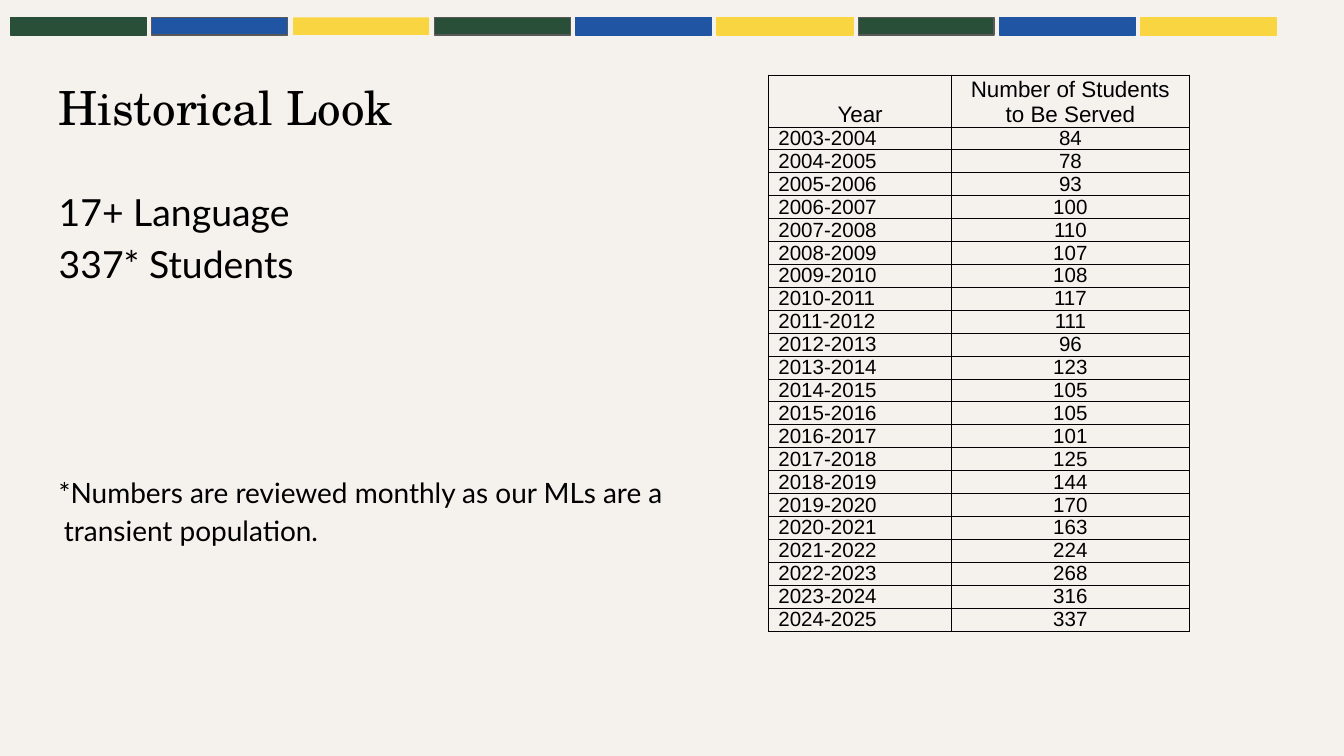
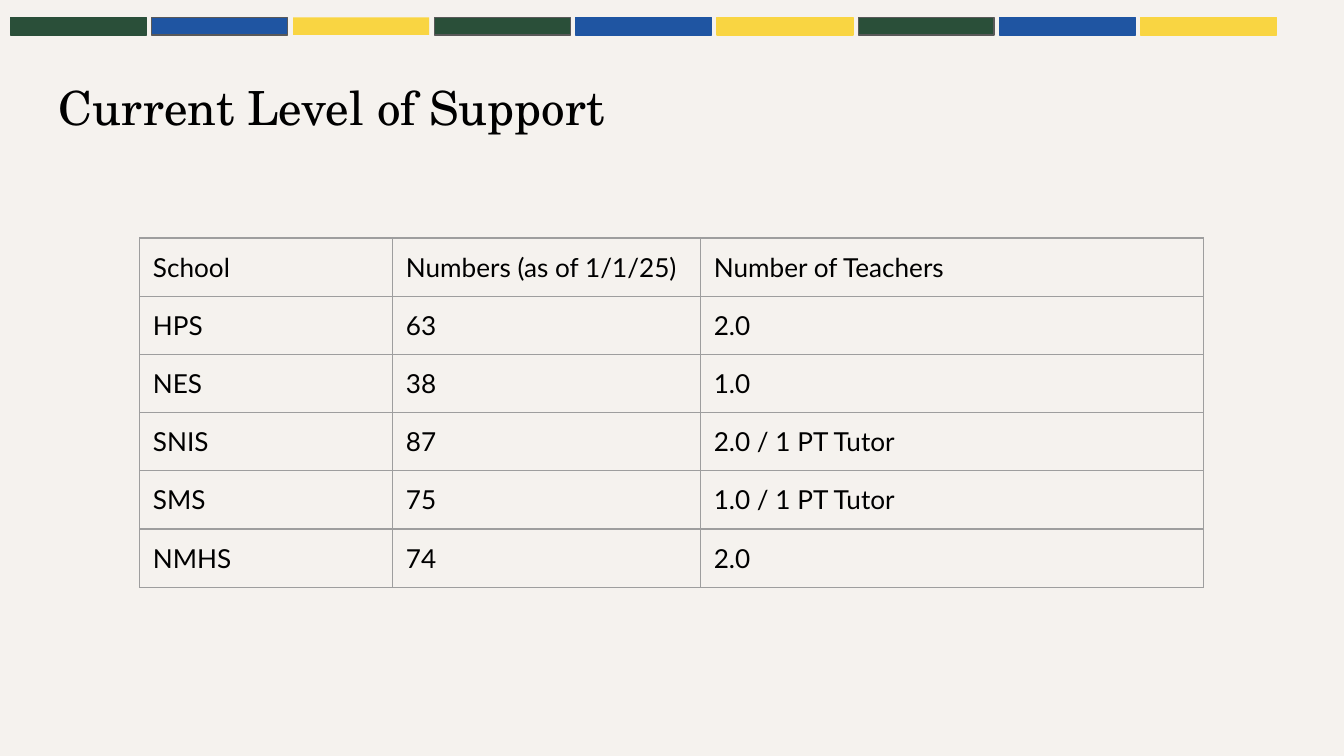
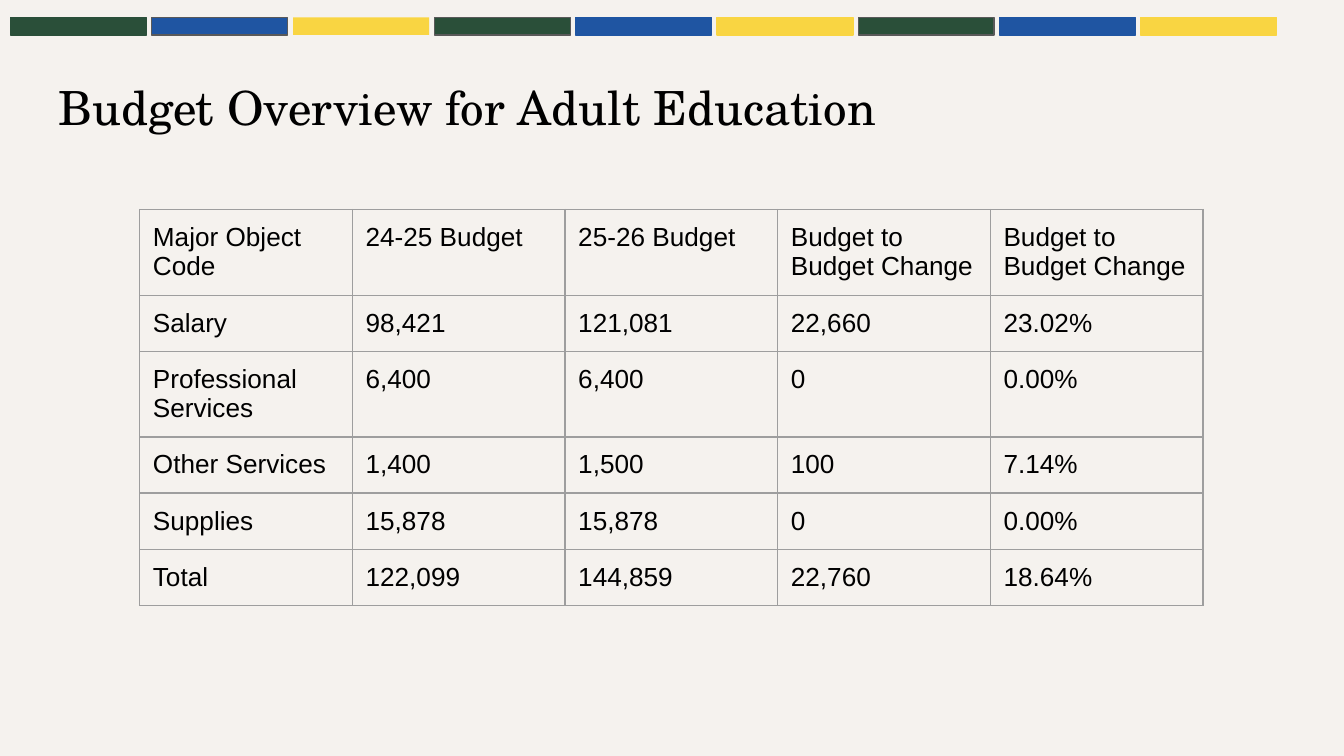
import lxml.etree
import pptx
import pptx.dml.color
import pptx.enum.shapes
import pptx.enum.text
import pptx.oxml
import pptx.oxml.ns
import pptx.util

Cm = pptx.util.Cm
Pt = pptx.util.Pt
ALIGN = pptx.enum.text.PP_ALIGN
ANCHOR = pptx.enum.text.MSO_ANCHOR

BLACK, PAPER, GREY = "000000", "F5F2EE", "595959"
GREEN, BLUE, YELLOW = "2A4F39", "1F55A2", "F9D542"
INSET = Cm(0.25)


def colour(code):
    return pptx.dml.color.RGBColor.from_string(code)


def write(para, text, font="Lato", size=14, align=ALIGN.LEFT, spacing=1.0, before=0, indent=0):
    para.alignment = align
    para.line_spacing = spacing
    para.space_before = Pt(before)
    if indent:
        properties = para._p.get_or_add_pPr()
        properties.set("marL", str(Cm(indent)))
        properties.set("indent", "0")
    span = para.add_run()
    span.text = text
    span.font.name = font
    span.font.size = Pt(size)
    span.font.color.rgb = colour(BLACK)


students = [84, 78, 93, 100, 110, 107, 108, 117, 111, 96, 123, 105, 105, 101,
            125, 144, 170, 163, 224, 268, 316, 337]
history = [("Year", "Number of Students to Be Served")]
for year, count in enumerate(students, start=2003):
    history.append((f"{year}-{year + 1}", str(count)))

support = [
    ("School", "Numbers (as of 1/1/25)", "Number of Teachers"),
    ("HPS", "63", "2.0"),
    ("NES", "38", "1.0"),
    ("SNIS", "87", "2.0 / 1 PT Tutor"),
    ("SMS", "75", "1.0 / 1 PT Tutor"),
    ("NMHS", "74", "2.0"),
]

budget = [
    ("Major Object Code", "24-25 Budget", "25-26 Budget", "Budget to Budget Change", "Budget to Budget Change"),
    ("Salary", "98,421", "121,081", "22,660", "23.02%"),
    ("Professional Services", "6,400", "6,400", "0", "0.00%"),
    ("Other Services", "1,400", "1,500", "100", "7.14%"),
    ("Supplies", "15,878", "15,878", "0", "0.00%"),
    ("Total", "122,099", "144,859", "22,760", "18.64%"),
]

slides = [
    dict(title="Historical Look", title_width=12.88, rows=history, left=14.53, top=1.42,
         widths=[3.45, 4.5], heights=[0.98] + [0.43] * len(students), font="Arial", size=11,
         header_size=12, aligns=[ALIGN.JUSTIFY, ALIGN.CENTER], header_align=ALIGN.CENTER,
         margins=(Cm(0.18), 0), anchor=ANCHOR.BOTTOM, border=BLACK, border_width=0.5),
    dict(title="Current Level of Support", title_width=23.67, rows=support, left=2.64, top=4.5,
         widths=[4.78, 5.82, 9.5], heights=[1.1] * 6, font="Lato", size=14,
         header_size=14, aligns=[ALIGN.LEFT] * 3, header_align=ALIGN.LEFT,
         margins=(INSET, INSET), anchor=ANCHOR.TOP, border="9E9E9E", border_width=0.75),
    dict(title="Budget Overview for Adult Education", title_width=23.67, rows=budget, left=2.64, top=3.96,
         widths=[4.02] * 5, heights=[1.62, 1.06, 1.62, 1.06, 1.06, 1.06], font="Arial", size=14,
         header_size=14, aligns=[ALIGN.LEFT] * 5, header_align=ALIGN.LEFT,
         margins=(INSET, INSET), anchor=ANCHOR.TOP, border="9E9E9E", border_width=0.75),
]

deck = pptx.Presentation()
deck.slide_width = Cm(25.4)
deck.slide_height = Cm(14.29)
layout = deck.slide_layouts[5]
layout.background.fill.solid()
layout.background.fill.fore_color.rgb = colour(PAPER)
pages = [deck.slides.add_slide(layout) for slide in slides]

band_fills = [GREEN, BLUE, YELLOW] * 3
band_lines = [GREEN, GREY, None, GREY, BLUE, YELLOW, GREY, BLUE, YELLOW]
for position, (fill, line) in enumerate(zip(band_fills, band_lines)):
    band = pages[0].shapes.add_shape(pptx.enum.shapes.MSO_SHAPE.RECTANGLE,
                                     Cm(0.2 + 2.67 * position), Cm(0.33), Cm(2.57), Cm(0.33))
    band.shadow.inherit = False
    band.fill.solid()
    band.fill.fore_color.rgb = colour(fill)
    if line:
        band.line.color.rgb = colour(line)
        band.line.width = Pt(0.75)
    else:
        band.line.fill.background()
    layout.shapes.element.append(band.element)

for page, slide in zip(pages, slides):
    title = page.shapes.title
    title.left, title.top = Cm(0.86), Cm(1.24)
    title.width, title.height = Cm(slide["title_width"]), Cm(1.6)
    frame = title.text_frame
    frame.word_wrap = True
    frame.auto_size = pptx.enum.text.MSO_AUTO_SIZE.NONE
    frame.vertical_anchor = ANCHOR.TOP
    frame.margin_left = frame.margin_right = frame.margin_top = frame.margin_bottom = INSET
    write(frame.paragraphs[0], slide["title"], font="TeX Gyre Schola", size=25.2)

    rows, widths, heights = slide["rows"], slide["widths"], slide["heights"]
    table = page.shapes.add_table(len(rows), len(widths), Cm(slide["left"]), Cm(slide["top"]),
                                  Cm(sum(widths)), Cm(sum(heights))).table
    table.first_row = False
    table.horz_banding = False
    for column, width in zip(table.columns, widths):
        column.width = Cm(width)
    for row_number, (values, height) in enumerate(zip(rows, heights)):
        table.rows[row_number].height = Cm(height)
        for column_number, value in enumerate(values):
            header = row_number == 0
            cell = table.cell(row_number, column_number)
            cell.fill.background()
            cell.margin_left = cell.margin_right = slide["margins"][0]
            cell.margin_top = cell.margin_bottom = slide["margins"][1]
            cell.vertical_anchor = slide["anchor"] if header else ANCHOR.TOP
            write(cell.text_frame.paragraphs[0], value, font=slide["font"],
                  size=slide["header_size"] if header else slide["size"],
                  align=slide["header_align"] if header else slide["aligns"][column_number])
            properties = cell._tc.get_or_add_tcPr()
            for order, side in enumerate(["lnL", "lnR", "lnT", "lnB"]):
                edge = lxml.etree.Element(pptx.oxml.ns.qn(f"a:{side}"), w=str(Pt(slide["border_width"])))
                solid = lxml.etree.SubElement(edge, pptx.oxml.ns.qn("a:solidFill"))
                lxml.etree.SubElement(solid, pptx.oxml.ns.qn("a:srgbClr"), val=slide["border"])
                properties.insert(order, edge)

summary = pages[0].shapes.add_textbox(Cm(0.86), Cm(3.2), Cm(23.67), Cm(9.5))
frame = summary.text_frame
frame.word_wrap = True
frame.margin_left = frame.margin_right = frame.margin_top = frame.margin_bottom = INSET
write(frame.paragraphs[0], "17+ Language", size=20, spacing=1.15)
write(frame.add_paragraph(), "337* Students", size=20, spacing=1.15)
write(frame.add_paragraph(), "*Numbers are reviewed monthly as our MLs are a", size=15, spacing=1.15, before=99)
write(frame.add_paragraph(), "transient population.", size=15, spacing=1.15, indent=0.1)

deck.save("out.pptx")
